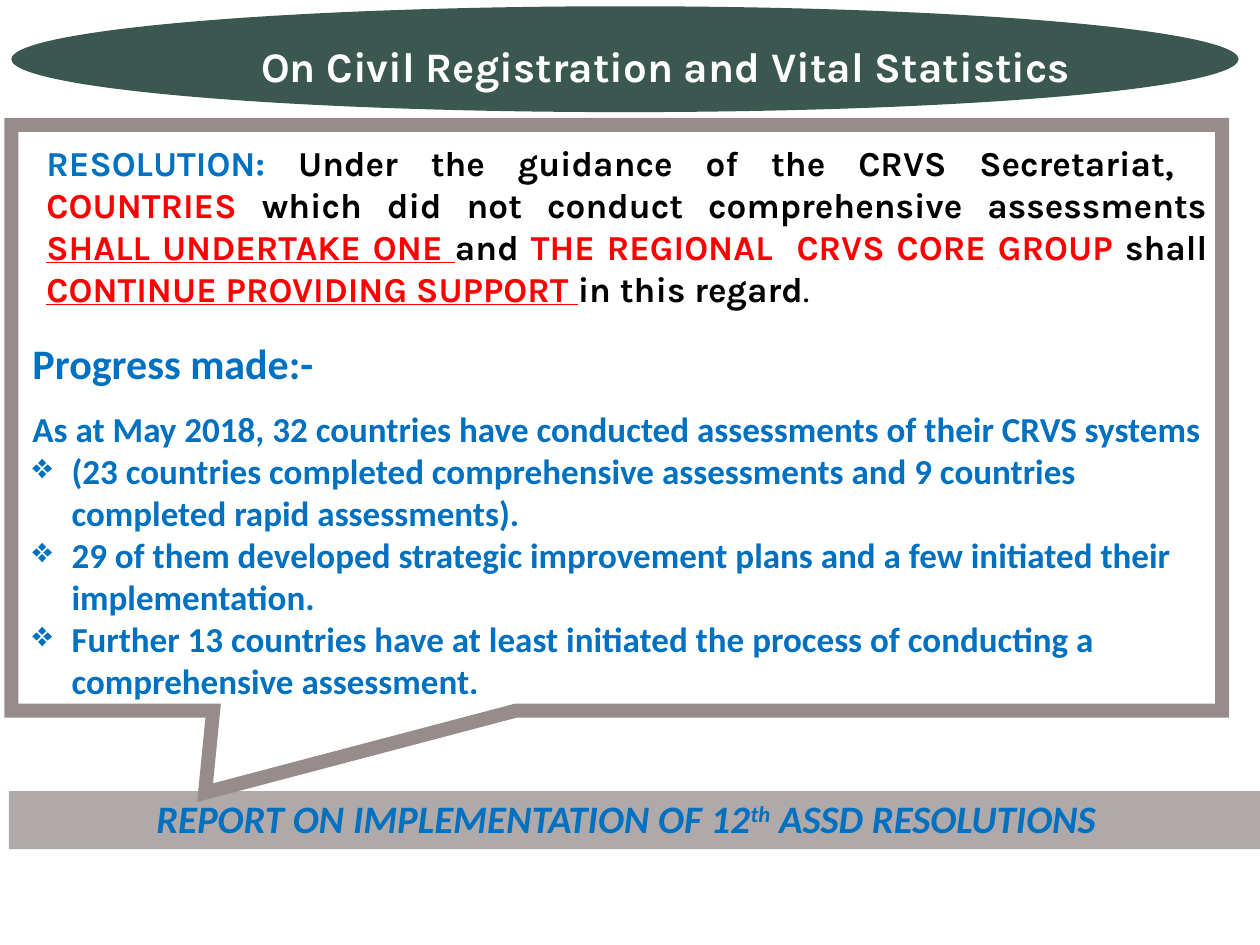
"""Build the slide on civil registration and vital statistics."""
import pptx
import pptx.util
import pptx.dml.color
import pptx.enum.shapes
import pptx.enum.text
import pptx.oxml.ns
import lxml.etree

Inches = pptx.util.Inches
Pt = pptx.util.Pt
RGB = pptx.dml.color.RGBColor
Shape = pptx.enum.shapes.MSO_SHAPE
Align = pptx.enum.text.PP_ALIGN
Fit = pptx.enum.text.MSO_AUTO_SIZE

BLUE = RGB(0x00, 0x70, 0xC0)
RED = RGB(0xFF, 0x00, 0x00)
BLACK = RGB(0x00, 0x00, 0x00)
WHITE = RGB(0xFF, 0xFF, 0xFF)
GREEN = RGB(0x3A, 0x57, 0x50)
GREY = RGB(0xB0, 0xA9, 0xA9)
FRAME = RGB(0x96, 0x8C, 0x8C)

HEAD = {"name": "Karla", "size": Pt(24), "bold": True}
QUOTE = {**HEAD, "size": Pt(20)}
LEAD = {**HEAD, "name": "Calibri"}
BODY = {**LEAD, "size": Pt(20)}
FOOT = {**LEAD, "size": Pt(22.2), "italic": True}
LINE = {"underline": True}


def child(node, tag, **attrs):
    """Add a drawing element under a node."""
    return lxml.etree.SubElement(node, pptx.oxml.ns.qn(tag), attrs)


class Deck:
    """Hold the style and the current slide."""

    def __init__(self):
        """Start a deck with one title-only slide."""
        self.show = pptx.Presentation()
        self.show.slide_width = Inches(10)
        self.show.slide_height = Inches(7.5)
        self.slide = self.show.slides.add_slide(self.show.slide_layouts[5])

    def shape(self, kind, box, fill=None, line=None, width=0, tail=()):
        """Add a preset shape with flat fill and outline."""
        item = self.slide.shapes.add_shape(kind, *map(Inches, box))
        item.shadow.inherit = False
        for part, tint in ((item.fill, fill), (item.line.fill, line)):
            if tint is None:
                part.background()
            else:
                part.solid()
                part.fore_color.rgb = tint
        if line is not None:
            item.line.width = Pt(width)
            child(item.line.fill._xPr, "a:miter", lim="800000")
        for spot, value in enumerate(tail):
            item.adjustments[spot] = value

    def text(self, box, grow=True):
        """Add a wrapping text box and return its frame."""
        item = self.slide.shapes.add_textbox(*map(Inches, box))
        frame = item.text_frame
        frame.word_wrap = True
        frame.auto_size = Fit.SHAPE_TO_FIT_TEXT if grow else Fit.NONE
        return frame

    def title(self, box, words):
        """Place the title in front of the shapes drawn so far."""
        item = self.slide.shapes.title
        for key, value in zip(("left", "top", "width", "height"), box):
            setattr(item, key, Inches(value))
        self.slide.shapes._spTree.append(item._element)
        frame = item.text_frame
        frame.word_wrap = True
        frame.auto_size = Fit.NONE
        frame.vertical_anchor = pptx.enum.text.MSO_ANCHOR.TOP
        self.para(frame, HEAD, [(words, WHITE)], alignment=Align.CENTER)

    def para(self, frame, style, runs, mark=None, **form):
        """Write a paragraph of (words, colour, extra format) runs."""
        para = frame.paragraphs[0]
        if para.runs:
            para = frame.add_paragraph()
        for key, value in form.items():
            setattr(para, key, value)
        if mark:
            props = para._p.get_or_add_pPr()
            hang = Inches(0.31)
            props.set("marL", str(hang))
            props.set("indent", str(-hang))
            child(props, "a:buChar", char=mark)
        for words, tint, *more in runs:
            run = para.add_run()
            run.text = words
            extra = more[0] if more else {}
            for key, value in {**style, **extra}.items():
                setattr(run.font, key, value)
            run.font.color.rgb = tint
        return para


def main():
    """Draw the slide and save it."""
    deck = Deck()
    deck.shape(Shape.RECTANGLE, (0.07, 6.28, 10, 0.46), GREY)
    foot = deck.text((0.12, 6.26, 9.7, 0.46), grow=False)
    para = deck.para(foot, FOOT, [
        ("REPORT ON IMPLEMENTATION OF 12", BLUE),
        ("th", BLUE),
        (" ASSD RESOLUTIONS", BLUE),
    ], alignment=Align.CENTER)
    para.runs[1].font._element.set("baseline", "30000")

    deck.shape(Shape.RECTANGULAR_CALLOUT, (0.09, 0.99, 9.61, 4.65),
               line=FRAME, width=8, tail=(-0.34, 0.64))
    news = deck.text((0.16, 2.63, 9.56, 3.01))
    deck.para(news, LEAD, [("Progress made:-", BLUE)])
    deck.para(news, BODY, [(
        "As at May 2018, 32 countries have conducted assessments "
        "of their CRVS systems", BLUE)], space_before=Pt(11))
    for words in (
        "(23 countries completed comprehensive assessments and 9 countries "
        "completed rapid assessments).",
        "29 of them developed strategic improvement plans and a few "
        "initiated their implementation.",
        "Further 13 countries have at least initiated the process of "
        "conducting a comprehensive assessment.",
    ):
        deck.para(news, BODY, [(words, BLUE)], mark="❖")

    deck.shape(Shape.OVAL, (0.09, 0.05, 9.74, 0.84), GREEN)
    deck.title((1.06, 0.27, 8.53, 0.5),
               "On Civil Registration and Vital Statistics ")
    quote = deck.text((0.27, 1.07, 9.41, 1.45))
    deck.para(quote, QUOTE, [
        ("RESOLUTION: ", BLUE),
        ("Under the guidance of the CRVS Secretariat,  ", BLACK),
        ("COUNTRIES ", RED),
        ("which did not conduct comprehensive assessments ", BLACK),
        ("SHALL UNDERTAKE ONE ", RED, LINE),
        ("and ", BLACK),
        ("THE REGIONAL  CRVS CORE GROUP ", RED),
        ("shall ", BLACK),
        ("CONTINUE PROVIDING SUPPORT ", RED, LINE),
        ("in this regard", BLACK),
        (".", BLACK, {"bold": False}),
    ], alignment=Align.JUSTIFY)
    deck.show.save("out.pptx")


if __name__ == "__main__":
    main()
